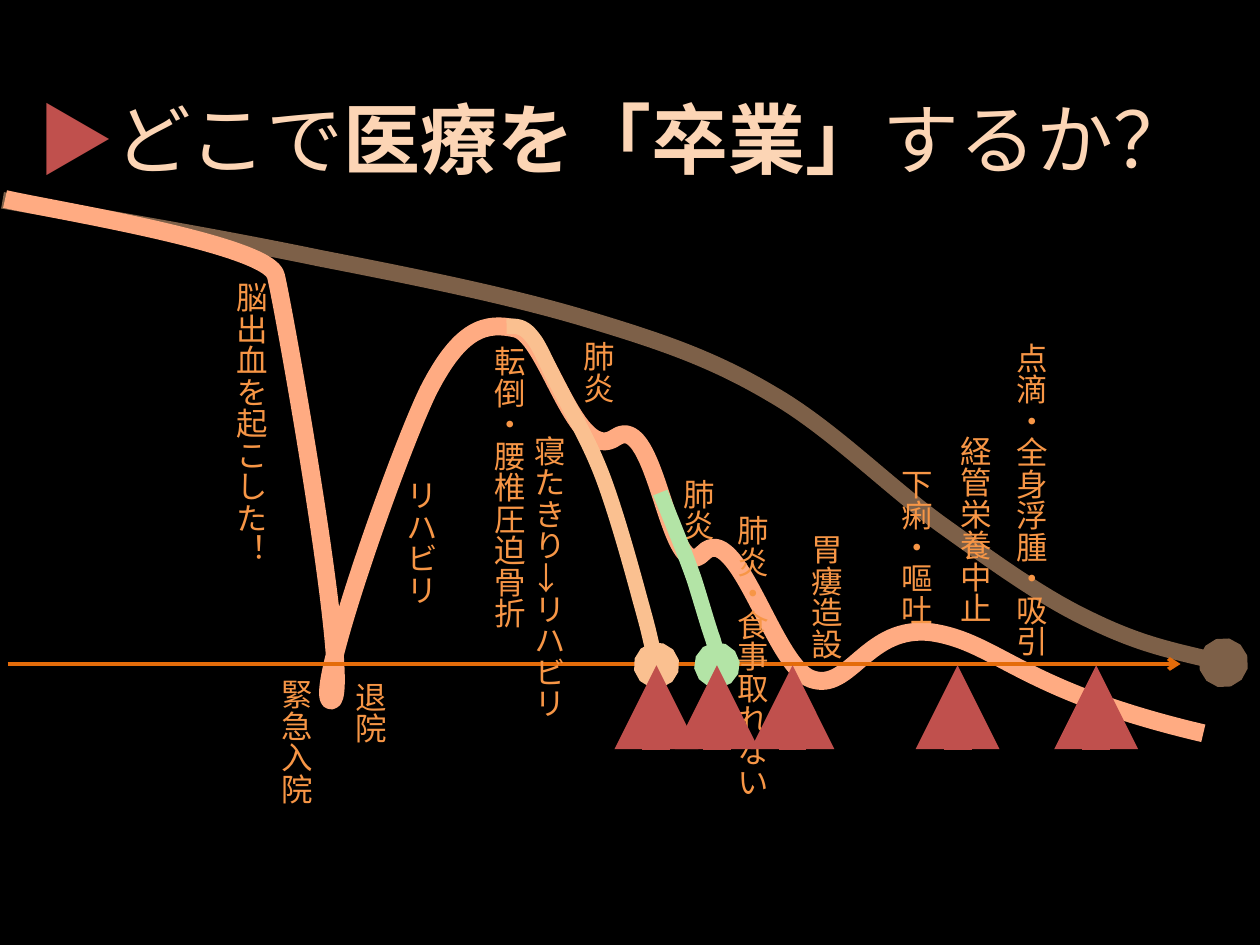
from lxml.etree import SubElement
from pptx import Presentation
from pptx.dml.color import RGBColor
from pptx.enum.shapes import MSO_CONNECTOR
from pptx.enum.text import MSO_AUTO_SIZE
from pptx.oxml.ns import qn
from pptx.util import Inches, Pt

FONT = "Noto Sans CJK JP"
COLORS = {
    "background": "000000",
    "natural": "FAC090",
    "illness": "FFAB82",
    "fracture": "FAC090",
    "pneumonia": "B3E4A6",
    "axis": "E46C0A",
    "label": "F79646",
    "marker": "C0504D",
    "title": "FCD5B5",
}

# Curve points: a start, then two control points and an end for each segment.
# Positions in the chart are inches from its left and top.
NATURAL_DECLINE = [
    (0.02, 0.09), (0.89, 0.24), (1.77, 0.39), (2.54, 0.55),
    (3.31, 0.7), (4.05, 0.85), (4.65, 1.03),
    (5.25, 1.21), (5.66, 1.35), (6.13, 1.63),
    (6.6, 1.9), (7.06, 2.37), (7.48, 2.67),
    (7.9, 2.97), (8.27, 3.24), (8.65, 3.42),
    (9.02, 3.6), (9.36, 3.68), (9.71, 3.76),
]
ILLNESS_COURSE = [
    (0.04, 0.08), (0.38, 0.16), (2.14, 0.44), (2.19, 0.69),
    (2.25, 0.93), (2.81, 4.05), (2.63, 4.06),
    (2.46, 4.07), (3.16, 2.09), (3.4, 1.6),
    (3.65, 1.11), (3.85, 1.05), (4.1, 1.11),
    (4.35, 1.18), (4.57, 2.2), (4.89, 1.97),
    (5.22, 1.75), (5.3, 3.18), (5.58, 2.89),
    (5.85, 2.61), (6.14, 3.79), (6.44, 3.89),
    (6.75, 4.0), (6.88, 3.45), (7.4, 3.52),
    (7.92, 3.6), (8.1, 3.98), (9.55, 4.32),
]
FRACTURE_END = [
    (4.02, 1.09), (4.09, 1.09), (4.15, 1.08), (4.22, 1.17),
    (4.29, 1.25), (4.34, 1.4), (4.44, 1.58),
    (4.53, 1.76), (4.66, 1.97), (4.77, 2.25),
    (4.88, 2.53), (5.01, 3.0), (5.08, 3.26),
    (5.15, 3.51), (5.21, 3.78), (5.21, 3.78),
]
PNEUMONIA_END = [
    (5.24, 2.41), (5.34, 2.66), (5.44, 2.9), (5.51, 3.1),
    (5.57, 3.29), (5.62, 3.47), (5.66, 3.58),
    (5.69, 3.69), (5.69, 3.73), (5.69, 3.78),
]
EVENTS = [
    ("脳出血を起こした！", 1.69, 0.64, 2.37),
    ("緊急入院", 2.05, 3.79, 1.11),
    ("退院", 2.64, 3.81, 0.61),
    ("リハビリ", 3.04, 2.21, 1.11),
    ("寝たきり→リハビリ", 4.06, 1.86, 2.37),
    ("肺炎", 4.45, 1.11, 0.61),
    ("肺炎", 5.24, 2.2, 0.61),
    ("胃瘻造設", 6.26, 2.64, 1.11),
    ("下痢・嘔吐", 6.97, 2.12, 1.36),
    ("点滴・全身浮腫・吸引", 7.88, 1.12, 2.63),
    ("経管栄養中止", 7.44, 1.86, 1.62),
    ("転倒・腰椎圧迫骨折", 3.74, 1.15, 2.37),
    ("肺炎・食事取れない", 5.67, 2.49, 2.37),
]
AXIS_Y = 3.77


def style_line(shape, color, width, tail=None, alpha=None):
    line = shape.line
    line.color.rgb = RGBColor.from_string(COLORS[color])
    line.width = Pt(width)
    properties = shape._element.spPr.find(qn("a:ln"))
    if alpha:
        tint = properties.find(".//" + qn("a:srgbClr"))
        SubElement(tint, qn("a:alpha"), val=str(alpha * 1000))
    if tail:
        SubElement(properties, qn("a:tailEnd"), type=tail)


def add_curve(shapes, box, points, color, width, tail=None, alpha=None):
    """Draw an open Bezier curve through the points."""
    left, top = box
    corners = [(Inches(left + x), Inches(top + y)) for x, y in points]
    builder = shapes.build_freeform(*corners[0])
    builder.add_line_segments(corners[1:], close=False)
    curve = builder.convert_to_shape()
    outline = curve._element.spPr.find(".//" + qn("a:path"))
    segments = outline.findall(qn("a:lnTo"))
    for first in range(0, len(segments), 3):
        bezier = SubElement(outline, qn("a:cubicBezTo"))
        for segment in segments[first:first + 3]:
            bezier.append(segment[0])
            outline.remove(segment)
    curve.fill.background()
    curve.shadow.inherit = False
    style_line(curve, color, width, tail, alpha)


def add_arrow(shapes, box, start, end, color, width, tail):
    left, top = box
    arrow = shapes.add_connector(
        MSO_CONNECTOR.STRAIGHT,
        Inches(left + start[0]), Inches(top + start[1]),
        Inches(left + end[0]), Inches(top + end[1]))
    style_line(arrow, color, width, tail)
    SubElement(arrow._element.spPr, qn("a:effectLst"))


def add_text(shapes, left, top, width, height, spans, size, vertical=False):
    """Add one line of text; spans are (text, color, bold)."""
    box = shapes.add_textbox(Inches(left), Inches(top), Inches(width), Inches(height))
    frame = box.text_frame
    frame.word_wrap = False
    frame.auto_size = MSO_AUTO_SIZE.SHAPE_TO_FIT_TEXT
    if vertical:
        frame._txBody.bodyPr.set("vert", "eaVert")
    para = frame.paragraphs[0]
    for text, color, bold in spans:
        span = para.add_run()
        span.text = text
        span.font.size = Pt(size)
        span.font.bold = bold
        span.font.name = FONT
        span.font.color.rgb = RGBColor.from_string(COLORS[color])
        SubElement(span._r.get_or_add_rPr(), qn("a:ea"), typeface=FONT)


def draw_course(page, box):
    """Draw the time axis, both long curves and the event labels."""
    shapes = page.shapes.add_group_shape().shapes
    left, top = box
    add_curve(shapes, box, NATURAL_DECLINE, "natural", 9.5, "oval", alpha=50)
    add_curve(shapes, box, ILLNESS_COURSE, "illness", 10.25)
    add_arrow(shapes, box, (0.06, AXIS_Y), (9.37, AXIS_Y), "axis", 2.25, "arrow")
    for text, x, y, height in EVENTS:
        add_text(shapes, left + x, top + y, 0.5, height,
                 [(text, "label", None)], 18, vertical=True)


def draw_exits(page, box):
    """Draw the early endings and the arrows at each possible end of care."""
    endings = [
        (5.21, FRACTURE_END, "fracture"),
        (5.69, PNEUMONIA_END, "pneumonia"),
        (6.29, None, None),
        (7.6, None, None),
        (8.7, None, None),
    ]
    for x, points, color in endings:
        if points:
            add_curve(page.shapes, box, points, color, 8.75, "oval")
        add_arrow(page.shapes, box, (x, 4.45), (x, 3.78), "marker", 16, "triangle")


def draw_title(page, left, top, width, height):
    spans = [
        ("▶", "marker", None),
        ("どこで", "title", None),
        ("医療を「卒業」", "title", True),
        ("するか？", "title", False),
    ]
    add_text(page.shapes, left, top, width, height, spans, 44)


def main():
    deck = Presentation()
    deck.slide_width, deck.slide_height = Inches(10), Inches(7.5)
    page = deck.slides.add_slide(deck.slide_layouts[6])
    page.background.fill.solid()
    page.background.fill.fore_color.rgb = RGBColor.from_string(COLORS["background"])
    chart_box = (0, 1.5)
    draw_course(page, chart_box)
    draw_exits(page, chart_box)
    draw_title(page, 0.2, 0.68, 9.46, 0.84)
    deck.save("out.pptx")


if __name__ == "__main__":
    main()
